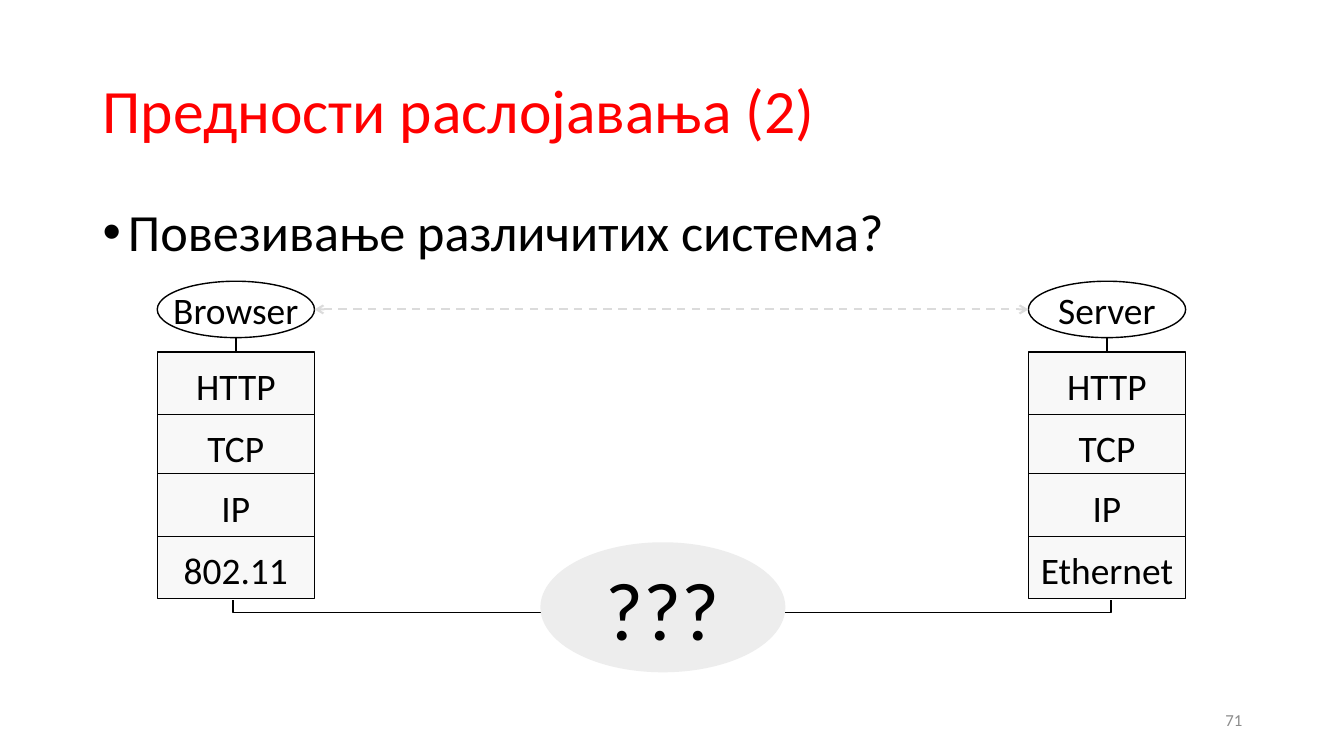
from dataclasses import dataclass

import lxml.etree
import pptx
import pptx.dml.color
import pptx.enum.dml
import pptx.enum.shapes
import pptx.enum.text
import pptx.oxml.ns
import pptx.util

Inches = pptx.util.Inches
Pt = pptx.util.Pt
ShapeKind = pptx.enum.shapes.MSO_SHAPE
ConnectorKind = pptx.enum.shapes.MSO_CONNECTOR
Align = pptx.enum.text.PP_ALIGN
Anchor = pptx.enum.text.MSO_ANCHOR
qn = pptx.oxml.ns.qn

COLORS = {
    "title": "FF0000",
    "text": "000000",
    "number": "8C8C8C",
    "layer": "F8F8F8",
    "application": "FFFFFF",
    "network": "EDEDED",
    "line": "000000",
    "dialogue": "DBDBDB",
}
FONT = "Calibri"
LABEL_SIZE = 26.7
NODE_WIDTH, LAYER_HEIGHT = 1.56, 0.62
OVAL_TOP, OVAL_HEIGHT = 2.79, 0.56
LAYER_TOPS = (3.49, 4.11, 4.7, 5.32)
CABLE_TOP, CABLE_BOTTOM = 5.95, 6.08


@dataclass
class Host:
    application: str
    left: float
    layers: tuple[str, ...]
    cable_x: float
    cable_end: float


@dataclass
class TextItem:
    text: str
    box: tuple[float, float, float, float]
    size: float
    color: str
    align: Align
    anchor: Anchor
    bullet: bool = False


HOSTS = (
    Host("Browser", 1.56, ("HTTP", "TCP", "IP", "802.11"), 2.31, 5.88),
    Host("Server", 10.2, ("HTTP", "TCP", "IP", "Ethernet"), 11.02, 7.45),
)
TEXT_ITEMS = (
    TextItem("Предности раслојавања (2)", (0.92, 0.4, 11.5, 1.45), 44, "title",
             Align.LEFT, Anchor.MIDDLE),
    TextItem("Повезивање различитих система?", (0.92, 2, 11.5, 4.76), 37.3, "text",
             Align.LEFT, Anchor.TOP, bullet=True),
    TextItem("71", (9.42, 6.95, 3, 0.4), 12, "number", Align.RIGHT, Anchor.MIDDLE),
)


def rgb(name: str) -> pptx.dml.color.RGBColor:
    return pptx.dml.color.RGBColor.from_string(COLORS[name])


def set_attributes(target, values: dict) -> None:
    for name, value in values.items():
        setattr(target, name, value)


def write_text(shape, text: str, size: float, color: str, align: Align, frame_format: dict):
    set_attributes(shape.text_frame, frame_format)
    paragraph = shape.text_frame.paragraphs[0]
    paragraph.alignment = align
    run = paragraph.add_run()
    run.text = text
    set_attributes(run.font, {"name": FONT, "size": Pt(size)})
    run.font.color.rgb = rgb(color)
    return paragraph


def add_text_item(slide, item: TextItem) -> None:
    box = slide.shapes.add_textbox(*map(Inches, item.box))
    frame_format = {"word_wrap": True, "vertical_anchor": item.anchor}
    paragraph = write_text(box, item.text, item.size, item.color, item.align, frame_format)
    paragraph.line_spacing = 0.9
    if item.bullet:
        paragraph.space_before = Pt(10)
        properties = paragraph._p.get_or_add_pPr()
        properties.set("marL", str(Inches(0.25)))
        properties.set("indent", str(Inches(-0.25)))
        lxml.etree.SubElement(properties, qn("a:buFont")).set("typeface", "Arial")
        lxml.etree.SubElement(properties, qn("a:buChar")).set("char", "•")


def add_node(slide, kind: ShapeKind, box: tuple[float, float, float, float], text: str,
             fill: str, size: float = LABEL_SIZE, outlined: bool = True,
             top_margin: float = 0, anchor: Anchor = Anchor.MIDDLE) -> None:
    shape = slide.shapes.add_shape(kind, *map(Inches, box))
    shape.shadow.inherit = False
    shape.fill.solid()
    shape.fill.fore_color.rgb = rgb(fill)
    if outlined:
        shape.line.color.rgb = rgb("line")
        shape.line.width = Pt(1)
    else:
        shape.line.fill.background()
    frame_format = {
        "word_wrap": False,
        "vertical_anchor": anchor,
        "margin_left": 0,
        "margin_right": 0,
        "margin_top": Inches(top_margin),
        "margin_bottom": 0,
    }
    write_text(shape, text, size, "text", Align.CENTER, frame_format)


def add_line(slide, start: tuple[float, float], end: tuple[float, float],
             color: str = "line", width: float = 1,
             kind: ConnectorKind = ConnectorKind.STRAIGHT):
    connector = slide.shapes.add_connector(kind, *map(Inches, start + end))
    connector.line.color.rgb = rgb(color)
    connector.line.width = Pt(width)
    lxml.etree.SubElement(connector._element.spPr, qn("a:effectLst"))
    return connector


def add_host(slide, host: Host) -> None:
    center = host.left + NODE_WIDTH / 2
    add_line(slide, (center, LAYER_TOPS[0]), (center, OVAL_TOP + OVAL_HEIGHT))
    for layer, top in zip(host.layers, LAYER_TOPS):
        add_node(slide, ShapeKind.RECTANGLE, (host.left, top, NODE_WIDTH, LAYER_HEIGHT),
                 layer, "layer", top_margin=0.11, anchor=Anchor.TOP)
    add_node(slide, ShapeKind.OVAL, (host.left, OVAL_TOP, NODE_WIDTH, OVAL_HEIGHT),
             host.application, "application")


def add_cable(slide, host: Host) -> None:
    cable = add_line(slide, (host.cable_end, CABLE_BOTTOM), (host.cable_x, CABLE_TOP),
                     kind=ConnectorKind.ELBOW)
    # One corner only: across, then up to the host
    cable._element.spPr.find(qn("a:prstGeom")).set("prst", "bentConnector2")


def add_dialogue(slide) -> None:
    middle = OVAL_TOP + OVAL_HEIGHT / 2
    arrow = add_line(slide, (HOSTS[0].left + NODE_WIDTH, middle), (HOSTS[1].left, middle),
                     "dialogue", 1.5)
    arrow.line.dash_style = pptx.enum.dml.MSO_LINE.DASH
    line = arrow.line._get_or_add_ln()
    for end in ("a:headEnd", "a:tailEnd"):
        lxml.etree.SubElement(line, qn(end)).set("type", "arrow")


def main() -> None:
    presentation = pptx.Presentation()
    set_attributes(presentation, {"slide_width": Inches(13.33), "slide_height": Inches(7.5)})
    slide = presentation.slides.add_slide(presentation.slide_layouts[6])

    # Title, bullet and slide number
    for item in TEXT_ITEMS:
        add_text_item(slide, item)

    # Protocol stacks and the dialogue between them
    for host in HOSTS:
        add_host(slide, host)
    add_dialogue(slide)

    # Cables into the unknown network
    for host in HOSTS:
        add_cable(slide, host)
    add_node(slide, ShapeKind.OVAL, (5.36, 5.38, 2.43, 1.29), "???", "network",
             size=58.7, outlined=False)

    presentation.save("out.pptx")


if __name__ == "__main__":
    main()
